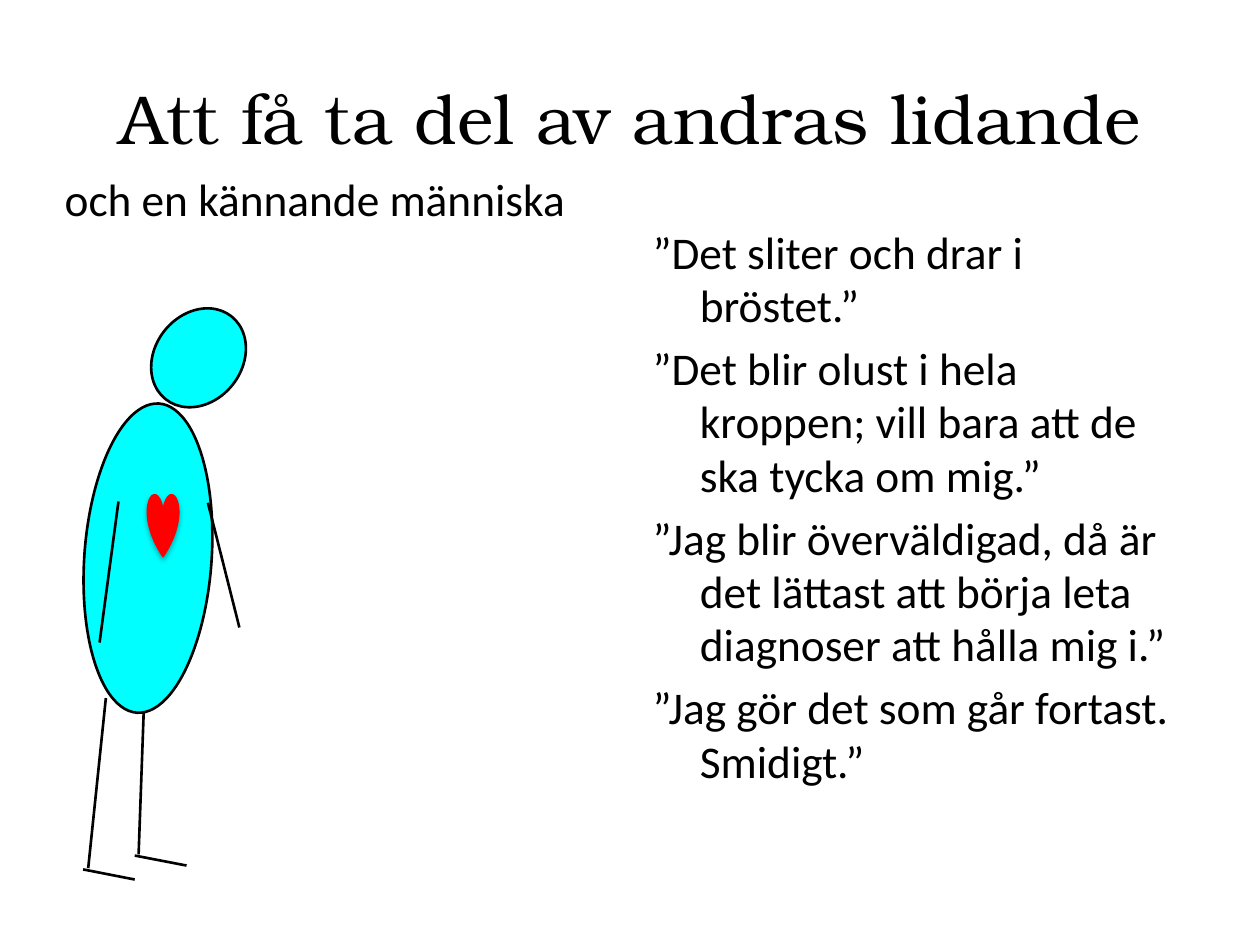
from lxml import etree
from pptx import Presentation
from pptx.dml.color import RGBColor
from pptx.enum.shapes import MSO_CONNECTOR, MSO_SHAPE
from pptx.enum.text import MSO_ANCHOR, PP_ALIGN
from pptx.oxml.ns import qn
from pptx.util import Pt

LINE = MSO_CONNECTOR.STRAIGHT
OVAL, HEART = MSO_SHAPE.OVAL, MSO_SHAPE.HEART
TOP, MID = MSO_ANCHOR.TOP, MSO_ANCHOR.MIDDLE
LEFT, MIDDLE = PP_ALIGN.LEFT, PP_ALIGN.CENTER
BLACK, CYAN, RED = "000000", "00FFFF", "FF0000"

# Content: boxes are left, top, width, height in points
TITLE = "Att få ta del av andras lidande"
LEAD = ["och en kännande människa"]
QUOTES = [
    "”Det sliter och drar i bröstet.”",
    "”Det blir olust i hela kroppen; vill bara att de ska tycka om mig.”",
    "”Jag blir överväldigad, då är det lättast att börja leta diagnoser att hålla mig i.”",
    "”Jag gör det som går fortast. Smidigt.”",
]
OVALS = [  # body, head: box and turn
    ((48.2, 230.4, 72.7, 177.1), 4.1),
    ((88.6, 174.2, 49.7, 60.5), 38.6),
]
LIMBS = [  # from x, y to x, y
    (60.5, 398.9, 50.4, 496.1),  # legs
    (82.1, 407.5, 79.2, 488.2),
    (118.8, 287.3, 136.8, 358.6),  # arms
    (67.7, 286.6, 56.9, 367.2),
    (47.5, 496.8, 77, 502.6),  # feet
    (77, 488.9, 106.6, 494.6),
]
HEART_BOX = (84.2, 282.2, 18, 36)


def color(code):
    return RGBColor.from_string(code)


def points(nums):
    return [Pt(n) for n in nums]


def add_text(slide, box, paras, size=25.9, font="Calibri", align=LEFT,
             anchor=TOP, margin=0, indent=0, gap=0, spacing=1.0):
    frame = slide.shapes.add_textbox(*points(box)).text_frame
    frame.word_wrap = True
    frame.vertical_anchor = anchor
    for i, text in enumerate(paras):
        para = frame.paragraphs[0] if i == 0 else frame.add_paragraph()
        para.alignment = align
        para.space_before = Pt(gap)
        para.line_spacing = spacing
        props = para._p.get_or_add_pPr()
        props.set("marL", str(Pt(margin)))
        props.set("indent", str(Pt(indent)))
        run = para.add_run()
        run.text = text
        run.font.size = Pt(size)
        run.font.name = font
        run.font.color.rgb = color(BLACK)


def add_form(parent, kind, box, fill, line, width, turn=0):
    form = parent.shapes.add_shape(kind, *points(box))
    form.shadow.inherit = False
    form.rotation = turn
    form.fill.solid()
    form.fill.fore_color.rgb = color(fill)
    form.line.color.rgb = color(line)
    form.line.width = Pt(width)
    return form


def add_limb(parent, ends):
    limb = parent.shapes.add_connector(LINE, *points(ends))
    limb.line.color.rgb = color(BLACK)
    limb.line.width = Pt(1.5)
    etree.SubElement(limb._element.spPr, qn("a:effectLst"))


def add_shade(form, blur, dist, angle, alpha):
    effects = form._element.spPr.find(qn("a:effectLst"))
    shade = etree.SubElement(effects, qn("a:outerShdw"), blurRad=str(Pt(blur)),
                             dist=str(Pt(dist)), dir=str(angle * 60000),
                             rotWithShape="0")
    tint = etree.SubElement(shade, qn("a:srgbClr"), val=BLACK)
    etree.SubElement(tint, qn("a:alpha"), val=str(alpha * 1000))


def main():
    deck = Presentation()
    deck.slide_width, deck.slide_height = Pt(720), Pt(540)
    slide = deck.slides.add_slide(deck.slide_layouts[6])

    # Title and the two text columns
    add_text(slide, (36, 21.6, 648, 90), [TITLE], size=39.6,
             font="TeX Gyre Bonum", align=MIDDLE, anchor=MID)
    add_text(slide, (12.2, 95.8, 341.3, 386.6), LEAD, margin=17.7, spacing=0.98)
    add_text(slide, (365.8, 126, 318.2, 356.4), QUOTES, margin=27, indent=-27,
             gap=5.5, spacing=0.98)

    # Stick figure
    figure = slide.shapes.add_group_shape()
    for box, turn in OVALS:
        add_form(figure, OVAL, box, CYAN, BLACK, 1.5, turn)
    for ends in LIMBS:
        add_limb(figure, ends)

    # Heart
    heart = add_form(slide, HEART, HEART_BOX, RED, RED, 0.75)
    add_shade(heart, blur=3.1, dist=1.8, angle=90, alpha=35)

    deck.save("out.pptx")


if __name__ == "__main__":
    main()
